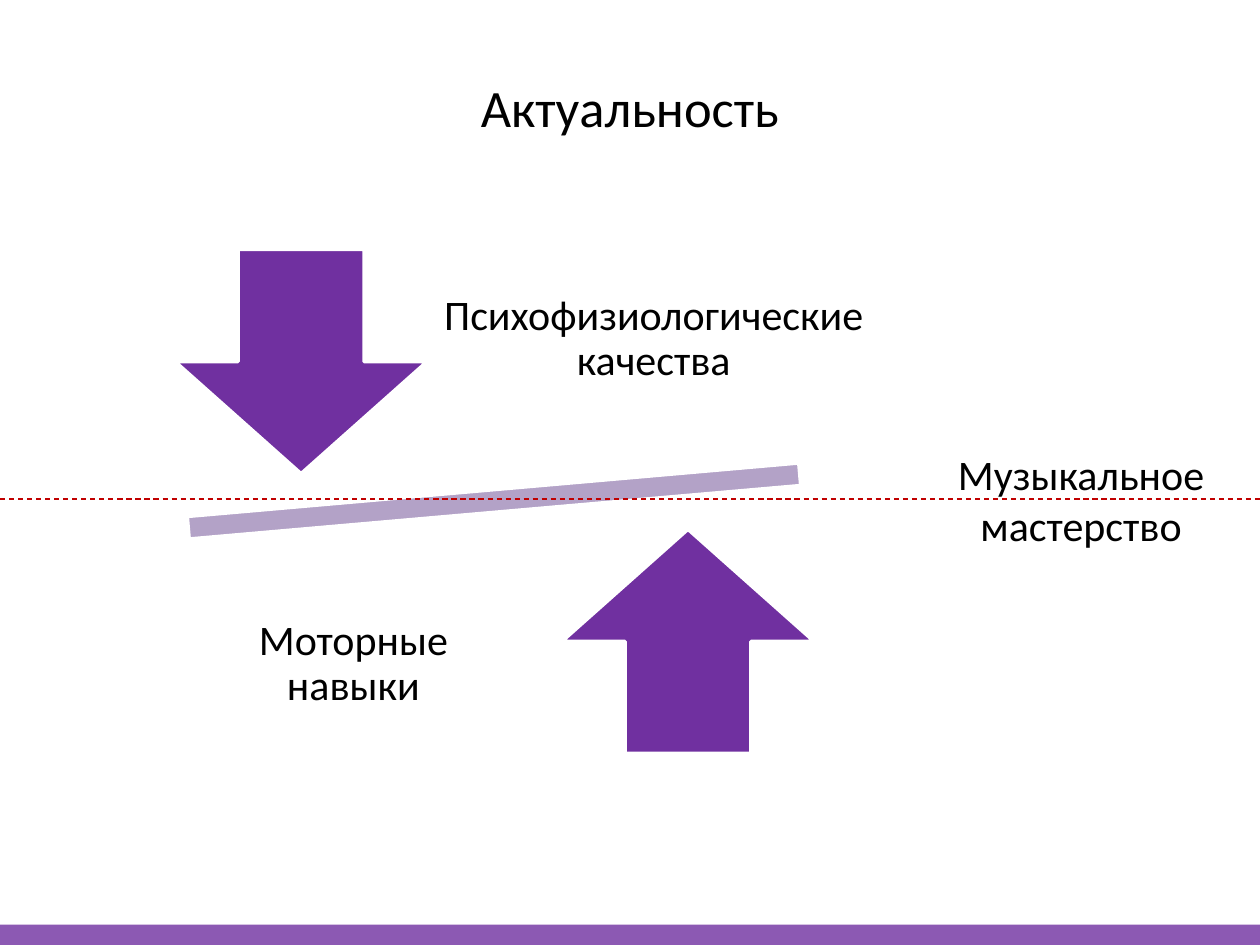
from dataclasses import dataclass

from lxml.etree import SubElement
from pptx import Presentation
from pptx.dml.color import RGBColor
from pptx.enum.dml import MSO_LINE
from pptx.enum.shapes import MSO_CONNECTOR, MSO_SHAPE
from pptx.enum.text import MSO_ANCHOR, MSO_AUTO_SIZE, PP_ALIGN
from pptx.oxml.ns import qn
from pptx.util import Cm, Pt

PURPLE = RGBColor(0x70, 0x30, 0xA0)
LILAC = RGBColor(0xB3, 0xA2, 0xC7)
RED = RGBColor(0xC0, 0x00, 0x00)
WHITE = RGBColor(0xFF, 0xFF, 0xFF)
BLACK = RGBColor(0x00, 0x00, 0x00)
FONT = "Calibri"


@dataclass
class Box:
    """Position and size in centimetres."""
    left: float
    top: float
    width: float
    height: float

    def lengths(self) -> tuple:
        return Cm(self.left), Cm(self.top), Cm(self.width), Cm(self.height)


@dataclass
class Figure:
    kind: MSO_SHAPE
    box: Box
    color: RGBColor
    rotation: float = 0
    outlined: bool = True


@dataclass
class Label:
    text: str
    box: Box


BAND = Figure(MSO_SHAPE.RECTANGLE, Box(-0.3, 18.64, 26, 0.41), PURPLE, outlined=False)
FIGURES = [
    Figure(MSO_SHAPE.MATH_MINUS, Box(1.54, 9.13, 16.84, 1.94), LILAC, rotation=355),
    Figure(MSO_SHAPE.DOWN_ARROW, Box(3.53, 5.03, 5.08, 4.52), PURPLE),
    Figure(MSO_SHAPE.UP_ARROW, Box(11.33, 10.67, 5.08, 4.52), PURPLE),
]
SCALE_LABELS = [
    Label("Психофизиологические качества", Box(8.2, 4.47, 9.96, 4.75)),
    Label("Моторные навыки", Box(4.42, 11.02, 5.41, 4.75)),
]
RESULT_LABEL = Label("Музыкальное мастерство", Box(18.8, 8.92, 5.99, 2.31))


def format_text(tf, size: float) -> None:
    for p in tf.paragraphs:
        p.alignment = PP_ALIGN.CENTER
        for r in p.runs:
            r.font.name = FONT
            r.font.size = Pt(size)
            r.font.color.rgb = BLACK


def add_figure(s, figure: Figure):
    sp = s.shapes.add_shape(figure.kind, *figure.box.lengths())
    sp.shadow.inherit = False
    sp.rotation = figure.rotation
    sp.fill.solid()
    sp.fill.fore_color.rgb = figure.color
    if figure.outlined:
        sp.line.color.rgb = WHITE
        sp.line.width = Pt(2)
    else:
        sp.line.fill.background()
    return sp


def set_opacity(sp, percent: int) -> None:
    color = sp.fill._xPr.find(qn("a:solidFill"))[0]
    SubElement(color, qn("a:alpha")).set("val", str(percent * 1000))


def add_label(s, label: Label):
    tf = s.shapes.add_textbox(*label.box.lengths()).text_frame
    tf.word_wrap = True
    tf.text = label.text
    format_text(tf, 24)
    return tf


def add_scale_label(s, label: Label) -> None:
    tf = add_label(s, label)
    tf.vertical_anchor = MSO_ANCHOR.MIDDLE
    tf.margin_left = tf.margin_right = tf.margin_top = tf.margin_bottom = Cm(0.48)
    p = tf.paragraphs[0]
    p.line_spacing = 0.9
    p.space_after = Pt(8.4)


def add_axis(s, y: float, length: float) -> None:
    line = s.shapes.add_connector(MSO_CONNECTOR.STRAIGHT, Cm(0), Cm(y), Cm(length), Cm(y))
    line.line.color.rgb = RED
    line.line.width = Pt(0.75)
    line.line.dash_style = MSO_LINE.DASH
    SubElement(line._element.spPr, qn("a:effectLst"))


def main() -> None:
    prs = Presentation()
    prs.slide_width, prs.slide_height = Cm(25.4), Cm(19.05)
    s = prs.slides.add_slide(prs.slide_layouts[5])

    # Title
    title = s.shapes.title
    title.left, title.top, title.width, title.height = Box(0, 0.97, 25.4, 2.34).lengths()
    title.text_frame.text = "Актуальность"
    title.text_frame.vertical_anchor = MSO_ANCHOR.MIDDLE
    format_text(title.text_frame, 30)

    # Bottom band
    set_opacity(add_figure(s, BAND), 80)

    # Balance: tilted beam, opposing arrows and their labels
    for figure in FIGURES:
        add_figure(s, figure)
    for label in SCALE_LABELS:
        add_scale_label(s, label)

    # Level line and the result
    add_axis(s, 10.06, 25.4)
    add_label(s, RESULT_LABEL).auto_size = MSO_AUTO_SIZE.SHAPE_TO_FIT_TEXT

    prs.save("out.pptx")


if __name__ == "__main__":
    main()
